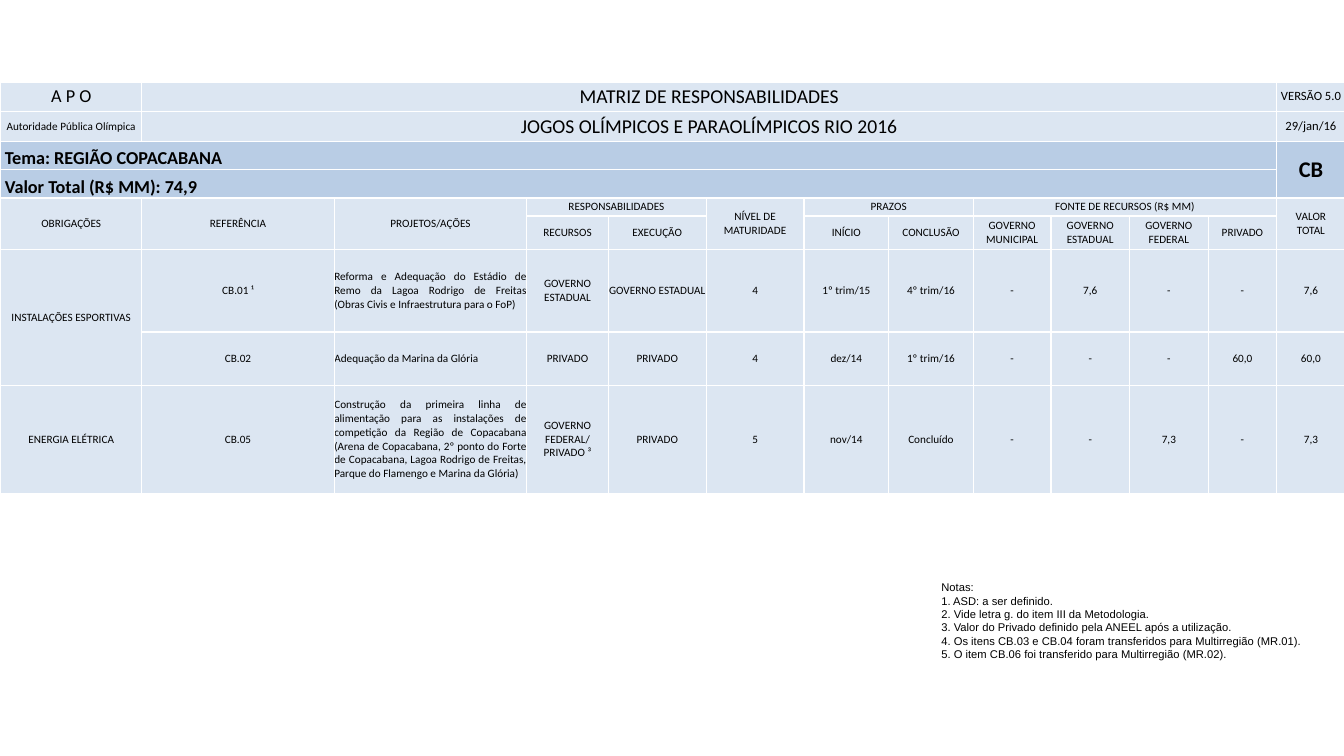
from copy import deepcopy
from dataclasses import dataclass

from lxml import etree
from pptx import Presentation
from pptx.dml.color import RGBColor
from pptx.enum.text import MSO_ANCHOR, MSO_AUTO_SIZE, PP_ALIGN
from pptx.oxml.ns import qn
from pptx.slide import Slide
from pptx.table import Table, _Cell
from pptx.text.text import TextFrame
from pptx.util import Pt

LEFT, CENTER, JUSTIFY = PP_ALIGN.LEFT, PP_ALIGN.CENTER, PP_ALIGN.JUSTIFY
MIDDLE, BOTTOM = MSO_ANCHOR.MIDDLE, MSO_ANCHOR.BOTTOM
GROW = MSO_AUTO_SIZE.SHAPE_TO_FIT_TEXT

BLACK = RGBColor(0x00, 0x00, 0x00)
WHITE = RGBColor(0xFF, 0xFF, 0xFF)
PALE_BLUE = RGBColor(0xDC, 0xE6, 0xF2)
BAND_BLUE = RGBColor(0xB9, 0xCD, 0xE5)

COLUMN_WIDTHS = (100.8, 137.5, 137.5, 58.3, 69.9, 69.9, 60.5,
                 60.5, 55.4, 56.2, 56.2, 48.9, 48.9)
ROW_HEIGHTS = (20.9, 21.6, 20.2, 20.2, 13, 23.8, 59, 38.2, 77)
THEME_ROWS = (2, 3)
FIRST_BODY_ROW = 6
PROJECT_COLUMN = 2


@dataclass(frozen=True)
class Entry:
    row: int
    column: int
    text: str
    rows: int = 1
    columns: int = 1
    size: float = 8
    bold: bool = False
    align: PP_ALIGN = CENTER
    anchor: MSO_ANCHOR = MIDDLE


# Title block, theme band and column headings
HEADINGS = [
    Entry(0, 0, "A P O", size=13),
    Entry(0, 1, "MATRIZ DE RESPONSABILIDADES", columns=11, size=14),
    Entry(0, 12, "VERSÃO 5.0", size=9),
    Entry(1, 0, "Autoridade Pública Olímpica"),
    Entry(1, 1, "JOGOS OLÍMPICOS E PARAOLÍMPICOS RIO 2016", columns=11, size=14),
    Entry(1, 12, "29/jan/16", size=9),
    Entry(2, 0, " Tema: REGIÃO COPACABANA", columns=12, size=13, bold=True,
          align=LEFT, anchor=BOTTOM),
    Entry(2, 12, "CB", rows=2, size=16, bold=True),
    Entry(3, 0, " Valor Total (R$ MM): 74,9", columns=12, size=13, bold=True,
          align=LEFT, anchor=BOTTOM),
    Entry(4, 0, "OBRIGAÇÕES", rows=2),
    Entry(4, 1, "REFERÊNCIA", rows=2),
    Entry(4, 2, "PROJETOS/AÇÕES", rows=2),
    Entry(4, 3, "RESPONSABILIDADES", columns=2),
    Entry(4, 5, "NÍVEL DE\nMATURIDADE", rows=2),
    Entry(4, 6, "PRAZOS", columns=2),
    Entry(4, 8, "FONTE DE RECURSOS (R$ MM)", columns=4),
    Entry(4, 12, "VALOR\nTOTAL", rows=2),
    Entry(5, 3, "RECURSOS"),
    Entry(5, 4, "EXECUÇÃO"),
    Entry(5, 6, "INÍCIO"),
    Entry(5, 7, "CONCLUSÃO"),
    Entry(5, 8, "GOVERNO MUNICIPAL"),
    Entry(5, 9, "GOVERNO ESTADUAL"),
    Entry(5, 10, "GOVERNO FEDERAL"),
    Entry(5, 11, "PRIVADO"),
    Entry(6, 0, "INSTALAÇÕES ESPORTIVAS", rows=2),
    Entry(8, 0, "ENERGIA ELÉTRICA"),
]

# Projects, from the reference column to the total
PROJECTS = [
    ("CB.01 ¹",
     "Reforma e Adequação do Estádio de Remo da Lagoa Rodrigo de Freitas\n"
     "(Obras Civis e Infraestrutura para o FoP)",
     "GOVERNO ESTADUAL", "GOVERNO ESTADUAL", "4", "1º trim/15", "4º trim/16",
     "-", "7,6", "-", "-", "7,6"),
    ("CB.02", "Adequação da Marina da Glória",
     "PRIVADO", "PRIVADO", "4", "dez/14", "1º trim/16",
     "-", "-", "-", "60,0", "60,0"),
    ("CB.05",
     "Construção da primeira linha de alimentação para as instalações de "
     "competição da Região de Copacabana (Arena de Copacabana, 2º ponto do Forte "
     "de Copacabana, Lagoa Rodrigo de Freitas, Parque do Flamengo e Marina da Glória)",
     "GOVERNO FEDERAL/ PRIVADO ³", "PRIVADO", "5", "nov/14", "Concluído",
     "-", "-", "7,3", "-", "7,3"),
]

NOTES = (
    "Notas:",
    "1. ASD: a ser definido.",
    "2. Vide letra g. do item III da Metodologia.",
    "3. Valor do Privado definido pela ANEEL após a utilização.",
    "4. Os itens CB.03 e CB.04 foram transferidos para Multirregião (MR.01).",
    "5. O item CB.06 foi transferido para Multirregião (MR.02).",
)


def write_text(frame: TextFrame, *lines: str, font: str = "Calibri", size: float = 8,
               bold: bool = False, align: PP_ALIGN = LEFT) -> None:
    """Write one paragraph per line; a newline within a line is a line break."""
    for index, line in enumerate(lines):
        paragraph = frame.paragraphs[0] if index == 0 else frame.add_paragraph()
        paragraph.text = line
        paragraph.alignment = align
        for run in paragraph.runs:
            run.font.name = font
            run.font.size = Pt(size)
            run.font.bold = bold
            run.font.color.rgb = BLACK
        # Line breaks take the format of the text around them
        for line_break in paragraph._p.findall(qn("a:br")):
            line_break.append(deepcopy(paragraph.runs[0].font._element))


def style_cell(cell: _Cell, fill: RGBColor) -> None:
    cell.margin_left = cell.margin_right = cell.margin_top = cell.margin_bottom = 0
    properties = cell._tc.get_or_add_tcPr()
    for side in ("a:lnL", "a:lnR", "a:lnT", "a:lnB"):
        border = etree.SubElement(properties, qn(side), w=str(Pt(1)))
        solid = etree.SubElement(border, qn("a:solidFill"))
        etree.SubElement(solid, qn("a:srgbClr"), val=str(WHITE))
    cell.fill.solid()
    cell.fill.fore_color.rgb = fill
    # Empty merged cells must not stretch the short rows
    paragraph = cell.text_frame.paragraphs[0]
    if not paragraph.runs:
        etree.SubElement(paragraph._p, qn("a:endParaRPr"), sz="800")


def fill_entry(table: Table, entry: Entry) -> None:
    cell = table.cell(entry.row, entry.column)
    if entry.rows > 1 or entry.columns > 1:
        cell.merge(table.cell(entry.row + entry.rows - 1,
                              entry.column + entry.columns - 1))
    cell.vertical_anchor = entry.anchor
    write_text(cell.text_frame, entry.text, size=entry.size,
               bold=entry.bold, align=entry.align)


def add_matrix(slide: Slide) -> None:
    table = slide.shapes.add_table(
        len(ROW_HEIGHTS), len(COLUMN_WIDTHS), Pt(0.5), Pt(58.5),
        Pt(sum(COLUMN_WIDTHS)), Pt(sum(ROW_HEIGHTS))).table
    table.first_row = table.horz_banding = False
    for column, width in zip(table.columns, COLUMN_WIDTHS):
        column.width = Pt(width)
    for row, height in zip(table.rows, ROW_HEIGHTS):
        row.height = Pt(height)

    projects = [
        Entry(row, column, text, align=JUSTIFY if column == PROJECT_COLUMN else CENTER)
        for row, values in enumerate(PROJECTS, FIRST_BODY_ROW)
        for column, text in enumerate(values, 1)
    ]
    for entry in HEADINGS + projects:
        fill_entry(table, entry)
    for index, row in enumerate(table.rows):
        for cell in row.cells:
            style_cell(cell, BAND_BLUE if index in THEME_ROWS else PALE_BLUE)


def add_notes(slide: Slide) -> None:
    box = slide.shapes.add_textbox(Pt(665.3), Pt(411.1), Pt(274.3), Pt(65.5))
    box.text_frame.word_wrap = False
    box.text_frame.auto_size = GROW
    write_text(box.text_frame, *NOTES, font="Arial")


def main() -> None:
    presentation = Presentation()
    presentation.slide_width, presentation.slide_height = Pt(960), Pt(540)
    slide = presentation.slides.add_slide(presentation.slide_layouts[6])
    add_notes(slide)
    add_matrix(slide)
    presentation.save("out.pptx")


if __name__ == "__main__":
    main()
